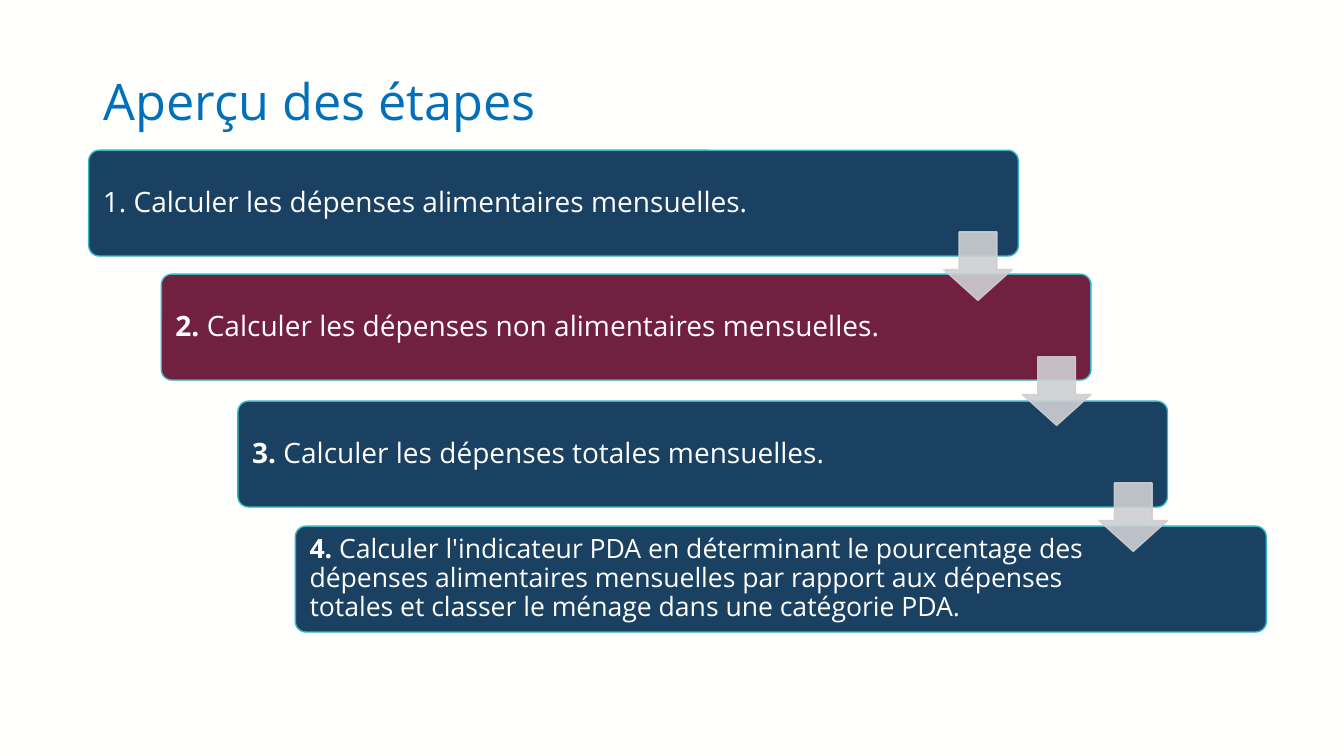
from lxml import etree
from pptx import Presentation
from pptx import util as u
from pptx.dml.color import RGBColor
from pptx.enum import shapes, text
from pptx.oxml import ns

PX = 9144
FONT = "Open Sans"
PAPER = RGBColor(0xFF, 0xFF, 0xFE)
TITLE_BLUE = RGBColor(0x00, 0x70, 0xBA)
NAVY = RGBColor(0x1A, 0x41, 0x61)
BURGUNDY = RGBColor(0x72, 0x20, 0x40)
TEAL = RGBColor(0x36, 0xB5, 0xC5)
GREY = RGBColor(0xCD, 0xCF, 0xD2)

STEP_HEIGHT = 105
ARROW_SIZE = 68
STEPS = [
    (88, 149, 922, 127, NAVY, 20, "", "1. Calculer les dépenses alimentaires mensuelles."),
    (160, 272, 922, 156, BURGUNDY, 20, "2. ", "Calculer les dépenses non alimentaires mensuelles."),
    (236, 398, 922, 155, NAVY, 20, "3. ", "Calculer les dépenses totales mensuelles."),
    (293, 522, 963, 163, NAVY, 19, "4. ",
     "Calculer l'indicateur PDA en déterminant le pourcentage des dépenses alimentaires "
     "mensuelles par rapport aux dépenses totales et classer le ménage dans une catégorie PDA."),
]
ARROWS = [(936, 230), (1014, 354), (1090, 479)]


def px(*lengths):
    """Turn px lengths into EMU."""
    return [u.Emu(length * PX) for length in lengths]


def add_span(para, words, size, color, bold=False):
    """Append a formatted run to a paragraph."""
    span = para.add_run()
    span.text = words
    span.font.name = FONT
    span.font.size = u.Pt(size)
    span.font.bold = bold
    span.font.color.rgb = color


def prepare_text(box):
    """Set wrapping, middle anchor and line spacing, and return the paragraph."""
    frame = box.text_frame
    frame.word_wrap = True
    frame.vertical_anchor = text.MSO_ANCHOR.MIDDLE
    para = frame.paragraphs[0]
    para.alignment = text.PP_ALIGN.LEFT
    para.line_spacing = 0.9
    return para


def add_title(page, words):
    """Add the slide title."""
    box = page.shapes.add_textbox(*px(93, 40, 1153, 126))
    add_span(prepare_text(box), words, 36, TITLE_BLUE)


def add_shape(page, kind, place, fill, line, adjustments):
    """Add a filled and outlined preset shape."""
    shape = page.shapes.add_shape(kind, *px(*place))
    shape.shadow.inherit = False
    for index, value in enumerate(adjustments):
        shape.adjustments[index] = value
    shape.fill.solid()
    shape.fill.fore_color.rgb = fill
    shape.line.color.rgb = line
    shape.line.width = u.Pt(1)
    return shape


def add_step(page, left, top, width, right_inset, fill, size, number, words):
    """Add one step box with its number and wording."""
    place = (left, top, width, STEP_HEIGHT)
    box = add_shape(page, shapes.MSO_SHAPE.ROUNDED_RECTANGLE, place, fill, TEAL, [0.1])
    para = prepare_text(box)
    frame = box.text_frame
    frame.margin_left, frame.margin_right = px(11, right_inset)
    frame.margin_top, frame.margin_bottom = px(8, 8)
    if number:
        add_span(para, number, size, PAPER, True)
    add_span(para, words, size, PAPER)


def add_arrow(page, left, top):
    """Add a slightly transparent arrow leading to the next step."""
    place = (left, top, ARROW_SIZE, ARROW_SIZE)
    arrow = add_shape(page, shapes.MSO_SHAPE.DOWN_ARROW, place, GREY, GREY, [0.55, 0.45])
    for color in arrow.element.spPr.iter(ns.qn("a:srgbClr")):
        etree.SubElement(color, ns.qn("a:alpha"), val="90000")


def main():
    """Build the slide and save it."""
    deck = Presentation()
    deck.slide_width, deck.slide_height = u.Inches(13.33), u.Inches(7.5)
    page = deck.slides.add_slide(deck.slide_layouts[6])
    page.background.fill.solid()
    page.background.fill.fore_color.rgb = PAPER
    add_title(page, "Aperçu des étapes")
    for step in STEPS:
        add_step(page, *step)
    for arrow in ARROWS:
        add_arrow(page, *arrow)
    deck.save("out.pptx")


if __name__ == "__main__":
    main()
